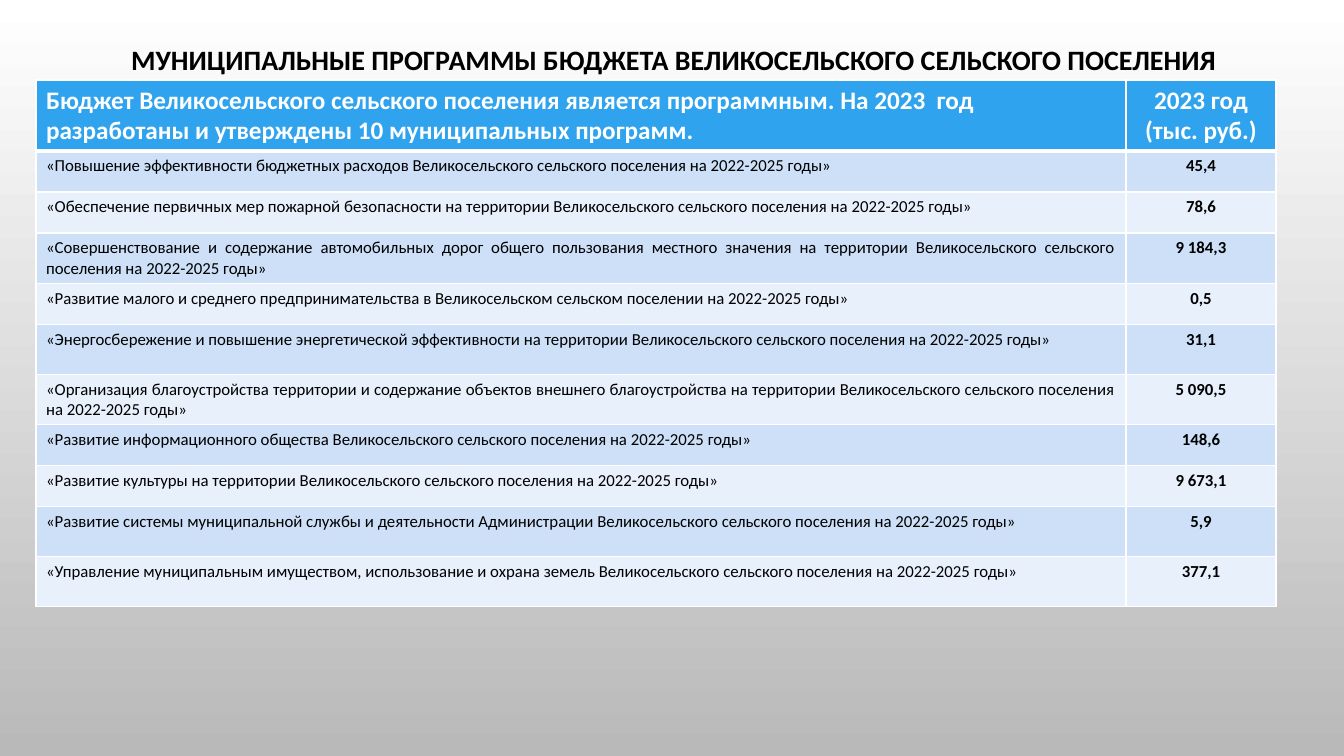
import pptx
import pptx.dml.color
import pptx.enum.text
import pptx.oxml
import pptx.oxml.ns
import pptx.util

EMU_PER_PX = 914400 / 100.8
FONT = "Calibri"
ALIGN = pptx.enum.text.PP_ALIGN
HEADER_HEIGHT, LOW_ROW, TALL_ROW = 71, 41, 50
HEADER_FILL, BAND_FILLS = "2FA3EE", ("CDE0F8", "E8F0FC")
TITLE = "МУНИЦИПАЛЬНЫЕ ПРОГРАММЫ БЮДЖЕТА ВЕЛИКОСЕЛЬСКОГО СЕЛЬСКОГО ПОСЕЛЕНИЯ "
HEADER = (
    "Бюджет Великосельского сельского поселения является программным. "
    "На 2023  год разработаны и утверждены 10 муниципальных программ.",
    "2023 год (тыс. руб.)",
)
PROGRAMMES = [
    ("«Повышение эффективности бюджетных расходов Великосельского сельского поселения на 2022-2025 годы»", "45,4", LOW_ROW),
    ("«Обеспечение первичных мер пожарной безопасности на территории Великосельского сельского поселения на 2022-2025 годы»", "78,6", LOW_ROW),
    ("«Совершенствование и содержание автомобильных дорог общего пользования местного значения на территории Великосельского сельского поселения на 2022-2025 годы»", "9 184,3", TALL_ROW),
    ("«Развитие малого и среднего предпринимательства в Великосельском сельском поселении на 2022-2025 годы»", "0,5", LOW_ROW),
    ("«Энергосбережение и повышение энергетической эффективности на территории Великосельского сельского поселения на 2022-2025 годы»", "31,1", TALL_ROW),
    ("«Организация благоустройства территории и содержание объектов внешнего благоустройства на территории Великосельского сельского поселения на 2022-2025 годы»", "5 090,5", TALL_ROW),
    ("«Развитие информационного общества Великосельского сельского поселения на 2022-2025 годы»", "148,6", LOW_ROW),
    ("«Развитие культуры на территории Великосельского сельского поселения на 2022-2025 годы»", "9 673,1", LOW_ROW),
    ("«Развитие системы муниципальной службы и деятельности Администрации Великосельского сельского поселения на 2022-2025 годы»", "5,9", TALL_ROW),
    ("«Управление муниципальным имуществом, использование и охрана земель Великосельского сельского поселения на 2022-2025 годы»", "377,1", TALL_ROW),
]


def px(length):
    """Turn a length in pixels into EMU."""
    return pptx.util.Emu(round(length * EMU_PER_PX))


def rgb(colour):
    """Turn a hex string into a colour."""
    return pptx.dml.color.RGBColor.from_string(colour)


def write(text_frame, text, size, colour, bold, alignment):
    """Write one formatted paragraph into a text frame."""
    text_frame.text = text
    paragraph = text_frame.paragraphs[0]
    paragraph.alignment = alignment
    for run in paragraph.runs:
        run.font.name = FONT
        run.font.size = pptx.util.Pt(size)
        run.font.bold = bold
        run.font.color.rgb = rgb(colour)


def set_borders(cell, top, bottom):
    """Draw white borders, with top and bottom widths in points."""
    properties = cell._tc.get_or_add_tcPr()
    widths = {"lnL": 1, "lnR": 1, "lnT": top, "lnB": bottom}
    for index, (side, width) in enumerate(widths.items()):
        border = pptx.oxml.parse_xml(
            f'<a:{side} {pptx.oxml.ns.nsdecls("a")} w="{pptx.util.Pt(width)}">'
            f'<a:solidFill><a:srgbClr val="FFFFFF"/></a:solidFill></a:{side}>'
        )
        properties.insert(index, border)


def fill_cell(cell, text, fill, size, colour, bold, alignment, top=1, bottom=1):
    """Set the text, fill and borders of one table cell."""
    write(cell.text_frame, text, size, colour, bold, alignment)
    cell.fill.solid()
    cell.fill.fore_color.rgb = rgb(fill)
    set_borders(cell, top, bottom)


def set_background(slide, *colours):
    """Fill the slide background with a gradient running downwards."""
    fill = slide.background.fill
    fill.gradient()
    fill.gradient_angle = 270
    for stop, colour in zip(fill.gradient_stops, colours):
        stop.color.rgb = rgb(colour)


def add_title(slide):
    """Add the centred slide title."""
    shape = slide.shapes.add_textbox(px(48), px(38), px(1258), px(44))
    shape.text_frame.word_wrap = True
    shape.text_frame.auto_size = pptx.enum.text.MSO_AUTO_SIZE.SHAPE_TO_FIT_TEXT
    write(shape.text_frame, TITLE, 20, "000000", True, ALIGN.CENTER)


def add_programme_table(slide):
    """Add the table of programmes and their amounts."""
    heights = [HEADER_HEIGHT] + [height for _, _, height in PROGRAMMES]
    widths = (1090, 150)
    table = slide.shapes.add_table(
        len(heights), len(widths), px(36), px(80), px(sum(widths)), px(sum(heights))
    ).table
    for column, width in zip(table.columns, widths):
        column.width = px(width)
    for row, height in zip(table.rows, heights):
        row.height = px(height)
    for column, alignment in enumerate((ALIGN.LEFT, ALIGN.CENTER)):
        fill_cell(table.cell(0, column), HEADER[column], HEADER_FILL, 18, "FFFFFF",
                  True, alignment, bottom=3)
    for row, (name, amount, _) in enumerate(PROGRAMMES, start=1):
        fill = BAND_FILLS[(row - 1) % 2]
        top = 3 if row == 1 else 1
        fill_cell(table.cell(row, 0), name, fill, 12, "000000", False, ALIGN.JUSTIFY, top)
        fill_cell(table.cell(row, 1), amount, fill, 12, "000000", True, ALIGN.CENTER, top)


def main():
    """Build the slide and save the presentation."""
    presentation = pptx.Presentation()
    presentation.slide_width = px(1344)
    presentation.slide_height = px(756)
    slide = presentation.slides.add_slide(presentation.slide_layouts[6])
    set_background(slide, "FFFFFF", "B9B9B9")
    add_title(slide)
    add_programme_table(slide)
    presentation.save("out.pptx")


if __name__ == "__main__":
    main()
